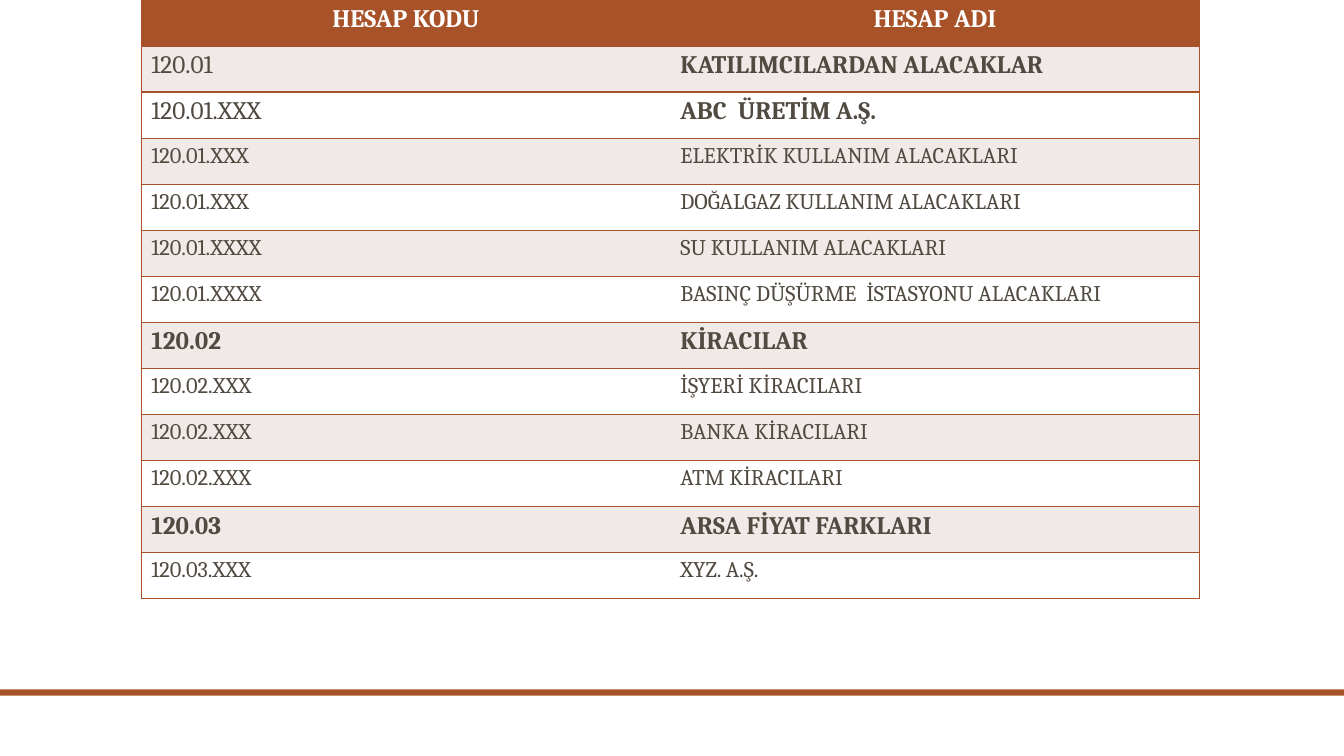
import pptx
import pptx.util
import pptx.dml.color
import pptx.enum.shapes
import pptx.enum.text
import pptx.oxml
import pptx.oxml.ns

Cm = pptx.util.Cm
Pt = pptx.util.Pt
ALIGN = pptx.enum.text.PP_ALIGN

COLORS = {"rust": "A85229", "band": "F1E9E8", "white": "FFFFFF", "text": "514A40"}
FONT = "Cambria"
HEADS = ("HESAP KODU", "HESAP ADI")

# Code, name, size, bold code, bold name
ROWS = [
    ("120.01", "KATILIMCILARDAN ALACAKLAR", 18, False, True),
    ("120.01.XXX", "ABC  ÜRETİM A.Ş.", 18, False, True),
    ("120.01.XXX", "ELEKTRİK KULLANIM ALACAKLARI", 16, False, False),
    ("120.01.XXX", "DOĞALGAZ KULLANIM ALACAKLARI", 16, False, False),
    ("120.01.XXXX", "SU KULLANIM ALACAKLARI", 16, False, False),
    ("120.01.XXXX", "BASINÇ DÜŞÜRME  İSTASYONU ALACAKLARI", 16, False, False),
    ("120.02", "KİRACILAR", 18, True, True),
    ("120.02.XXX", "İŞYERİ KİRACILARI", 16, False, False),
    ("120.02.XXX", "BANKA KİRACILARI", 16, False, False),
    ("120.02.XXX", "ATM KİRACILARI", 16, False, False),
    ("120.03", "ARSA FİYAT FARKLARI", 18, True, True),
    ("120.03.XXX", "XYZ. A.Ş.", 16, False, False),
]


def color(name):
    return pptx.dml.color.RGBColor.from_string(COLORS[name])


def write(frame, text, size=16, bold=False, tint="text", align=ALIGN.LEFT):
    para = frame.paragraphs[0]
    para.alignment = align
    run = para.add_run()
    run.text = text
    run.font.name = FONT
    run.font.size = Pt(size)
    run.font.bold = bold
    run.font.color.rgb = color(tint)


def paint(cell, tint):
    cell.fill.solid()
    cell.fill.fore_color.rgb = color(tint)


def edge(cell, open_side):
    """Draw every border of a cell except the one on its open side."""
    props = cell._tc.get_or_add_tcPr()
    space = pptx.oxml.ns.nsdecls("a")
    for place, side in enumerate("LRTB"):
        if side == open_side:
            ink = "<a:noFill/>"
        else:
            ink = f'<a:solidFill><a:srgbClr val="{COLORS["rust"]}"/></a:solidFill>'
        line = f'<a:ln{side} {space} w="{Pt(1)}">{ink}</a:ln{side}>'
        props.insert(place, pptx.oxml.parse_xml(line))


def ledger(slide, left, top, width, height):
    count = len(ROWS) + 1
    table = slide.shapes.add_table(count, 2, left, top, width, height).table
    for col in table.columns:
        col.width = int(width / 2)
    for row in table.rows:
        row.height = int(height / count)

    # Header row
    for cell, head in zip(table.rows[0].cells, HEADS):
        paint(cell, "rust")
        write(cell.text_frame, head, size=18, bold=True, tint="white",
              align=ALIGN.CENTER)

    # Account rows
    for num, (code, name, size, *bolds) in enumerate(ROWS, 1):
        for cell, text, bold in zip(table.rows[num].cells, (code, name), bolds):
            paint(cell, "band" if num % 2 else "white")
            write(cell.text_frame, text, size=size, bold=bold)

    # Borders, open between the two columns
    for row in table.rows:
        for cell, side in zip(row.cells, "RL"):
            edge(cell, side)


def footer(slide, left, top, width, height):
    bar = slide.shapes.add_shape(
        pptx.enum.shapes.MSO_SHAPE.RECTANGLE, left, top, width, height)
    bar.shadow.inherit = False
    bar.fill.solid()
    bar.fill.fore_color.rgb = color("rust")
    bar.line.fill.background()


def main():
    deck = pptx.Presentation()
    deck.slide_width = Cm(33.87)
    deck.slide_height = Cm(19.05)
    slide = deck.slides.add_slide(deck.slide_layouts[6])
    footer(slide, 0, Cm(17.37), deck.slide_width, Cm(0.16))
    ledger(slide, Cm(3.56), 0, Cm(26.67), Cm(15.09))
    deck.save("out.pptx")


if __name__ == "__main__":
    main()
